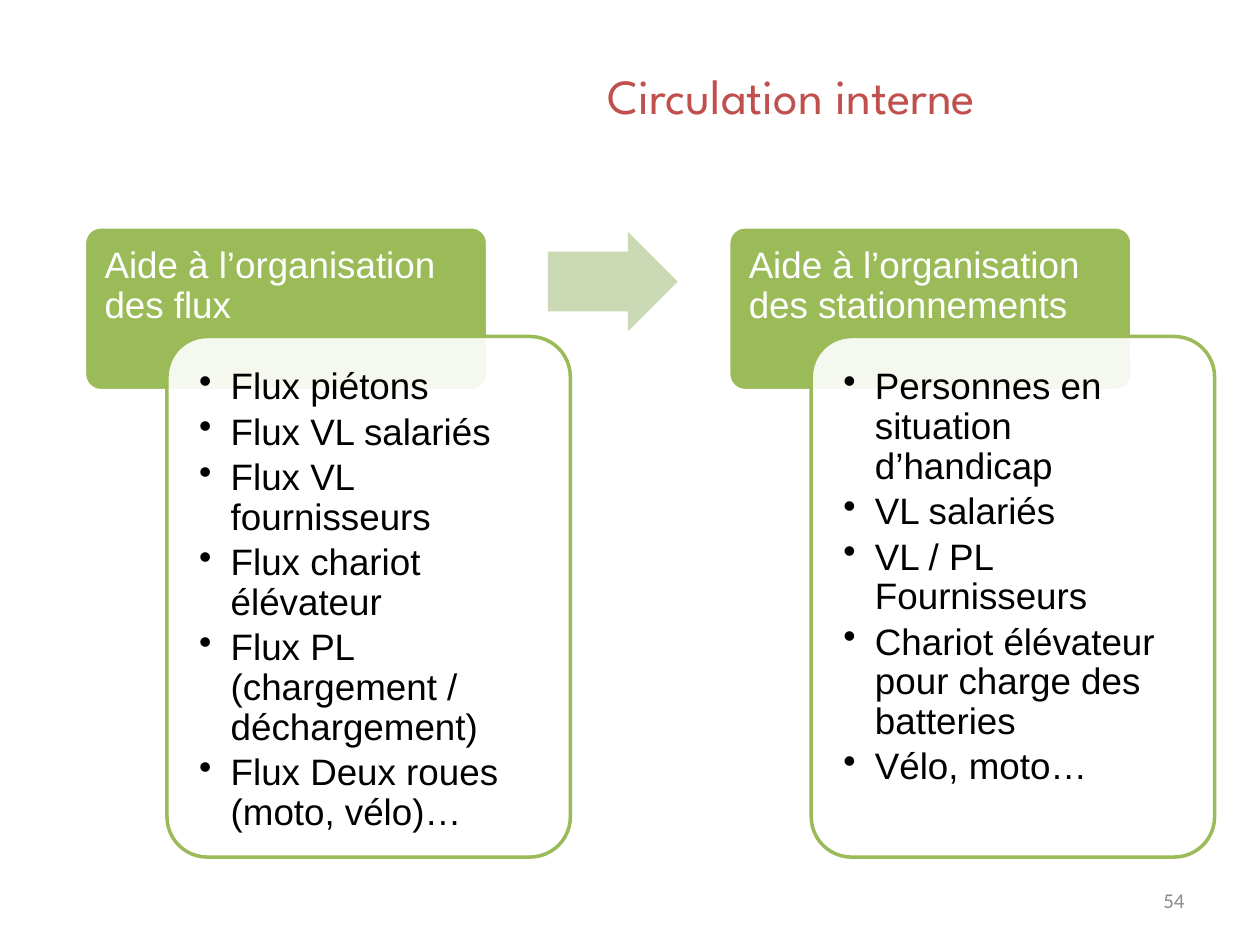
from lxml.etree import SubElement as Sub
from pptx import Presentation as Deck
from pptx.dml.color import RGBColor as Rgb
from pptx.enum.shapes import MSO_SHAPE as Kind
from pptx.enum.text import MSO_ANCHOR as Anchor, PP_ALIGN as Align
from pptx.oxml.ns import qn
from pptx.util import Inches, Pt


class Theme:
    green, pale, white = "9BBB59", "CBDAB5", "FFFFFF"
    black, red, grey = "000000", "C0504D", "8B8B8B"
    title = dict(name="League Spartan", size=Pt(28))
    body = dict(name="Arial", size=Pt(21))
    note = dict(name="Calibri", size=Pt(12))
    edge = Pt(2)


PANELS = [
    ("Aide à l’organisation des flux",
     ["Flux piétons", "Flux VL salariés", "Flux VL fournisseurs",
      "Flux chariot élévateur", "Flux PL (chargement / déchargement)",
      "Flux Deux roues (moto, vélo)…"]),
    ("Aide à l’organisation des stationnements",
     ["Personnes en situation d’handicap", "VL salariés",
      "VL / PL Fournisseurs", "Chariot élévateur pour charge des batteries",
      "Vélo, moto…"]),
]


def put(obj, vals):
    for key, val in vals.items():
        setattr(obj, key, val)


def part(box, x, y, w, h):
    """Box at the given shares of a larger box."""
    left, top, wide, high = box
    return left + x * wide, top + y * high, w * wide, h * high


def inch(box):
    return [Inches(v) for v in box]


def write(para, text, font, color):
    run = para.add_run()
    run.text = text
    put(run.font, font)
    run.font.color.rgb = Rgb.from_string(color)


def frame(slide, box, pads, anchor=Anchor.TOP):
    tf = slide.shapes.add_textbox(*inch(box)).text_frame
    sides = ("margin_left", "margin_top", "margin_right", "margin_bottom")
    put(tf, dict(zip(sides, inch(pads)), word_wrap=True,
                 vertical_anchor=anchor))
    return tf


def block(slide, kind, box, fill, edge=None, adj=(0.1,), alpha=None):
    shape = slide.shapes.add_shape(kind, *inch(box))
    shape.shadow.inherit = False
    for i, val in enumerate(adj):
        shape.adjustments[i] = val
    shape.fill.solid()
    shape.fill.fore_color.rgb = Rgb.from_string(fill)
    if alpha:
        tone = shape.fill._xPr.find(".//" + qn("a:srgbClr"))
        Sub(tone, qn("a:alpha"), val=str(alpha * 1000))
    if edge:
        shape.line.color.rgb = Rgb.from_string(edge)
        shape.line.width = Theme.edge
    else:
        shape.line.fill.background()


def bullet(para):
    props = para._p.get_or_add_pPr()
    props.set("marL", str(Inches(0.25)))
    props.set("indent", str(Inches(-0.25)))
    Sub(props, qn("a:buChar"), char="•")


def panel(slide, box, head, items):
    # Green heading behind the card
    block(slide, Kind.ROUNDED_RECTANGLE, part(box, 0, 0, 0.83, 0.26),
          Theme.green, Theme.white)
    tf = frame(slide, part(box, 0, 0, 0.83, 0.174), (0.16, 0.16, 0.16, 0.09))
    para = tf.paragraphs[0]
    para.line_spacing = 0.9
    write(para, head, Theme.body, Theme.white)

    # Translucent card with its list
    card = part(box, 0.17, 0.174, 0.83, 0.826)
    block(slide, Kind.ROUNDED_RECTANGLE, card, Theme.white, Theme.green,
          alpha=90)
    tf = frame(slide, part(card, 0.03, 0.022, 0.94, 0.956), [0.16] * 4)
    for i, item in enumerate(items):
        para = tf.add_paragraph() if i else tf.paragraphs[0]
        bullet(para)
        put(para, dict(line_spacing=0.9, space_after=Pt(3.3)))
        write(para, item, Theme.body, Theme.black)


def flow(slide, box):
    # Two panels at the ends of the row, an arrow in the gap
    share = 0.43
    for i, (head, items) in enumerate(PANELS):
        panel(slide, part(box, i * (1 - share), 0, share, 1), head, items)
    block(slide, Kind.RIGHT_ARROW, part(box, 0.41, 0.008, 0.115, 0.158),
          Theme.pale, adj=(0.6, 0.5))


def header(slide, box):
    title = slide.shapes.title
    put(title, dict(zip(("left", "top", "width", "height"), inch(box))))
    tf = title.text_frame
    tf.vertical_anchor = Anchor.MIDDLE
    para = tf.paragraphs[0]
    para.alignment = Align.CENTER
    write(para, "Circulation interne", Theme.title, Theme.red)


def number(slide, box):
    tf = frame(slide, box, (0.1, 0.05, 0.1, 0.05), Anchor.MIDDLE)
    para = tf.paragraphs[0]
    para.alignment = Align.RIGHT
    write(para, "54", Theme.note, Theme.grey)


def main():
    deck = Deck()
    page = (0, 0, 10, 7.5)
    put(deck, dict(slide_width=Inches(10), slide_height=Inches(7.5)))
    slide = deck.slides.add_slide(deck.slide_layouts[5])
    header(slide, part(page, 0.257, 0.017, 0.742, 0.167))
    flow(slide, part(page, 0.067, 0.24, 0.897, 0.667))
    number(slide, part(page, 0.717, 0.927, 0.233, 0.052))
    deck.save("out.pptx")


if __name__ == "__main__":
    main()
